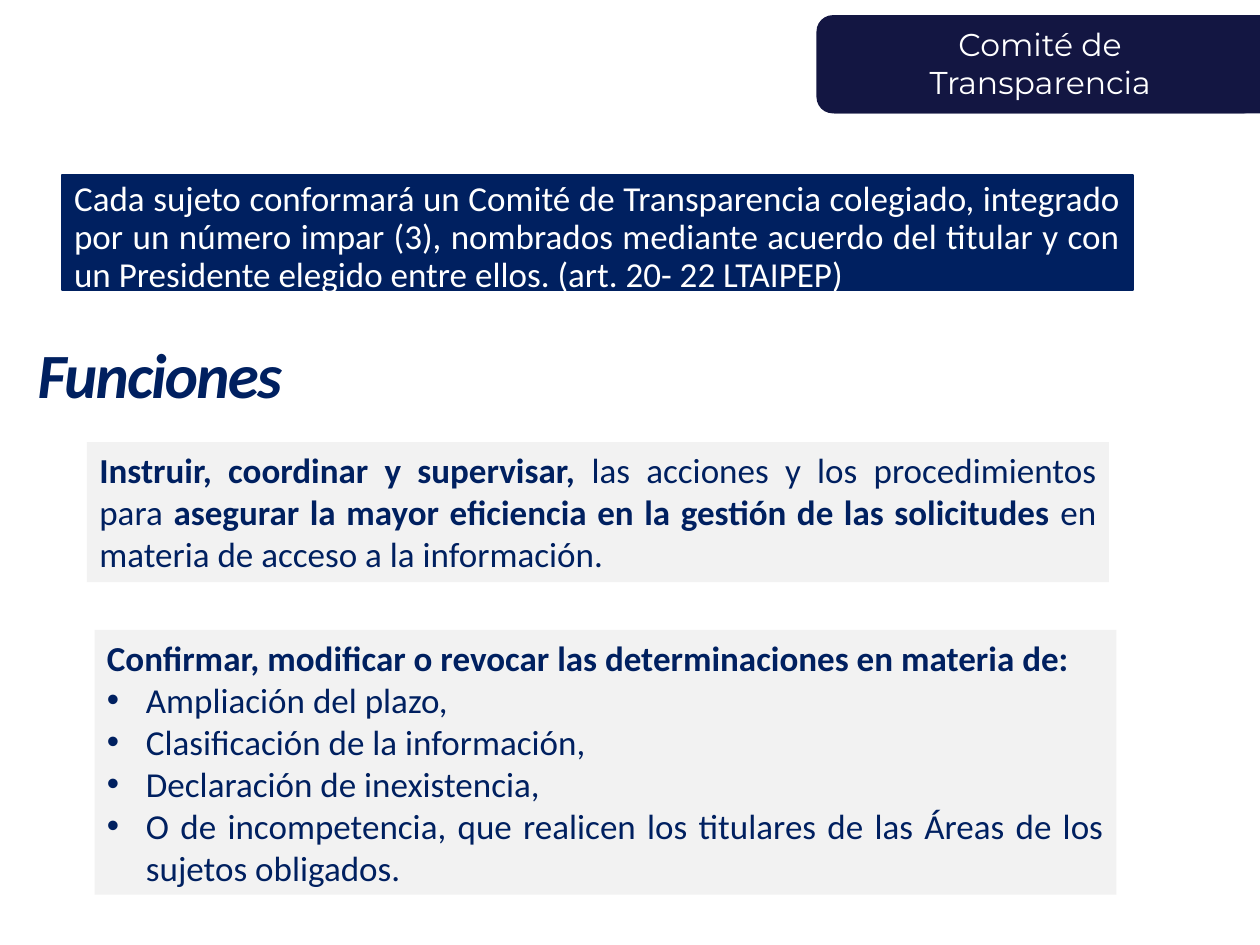
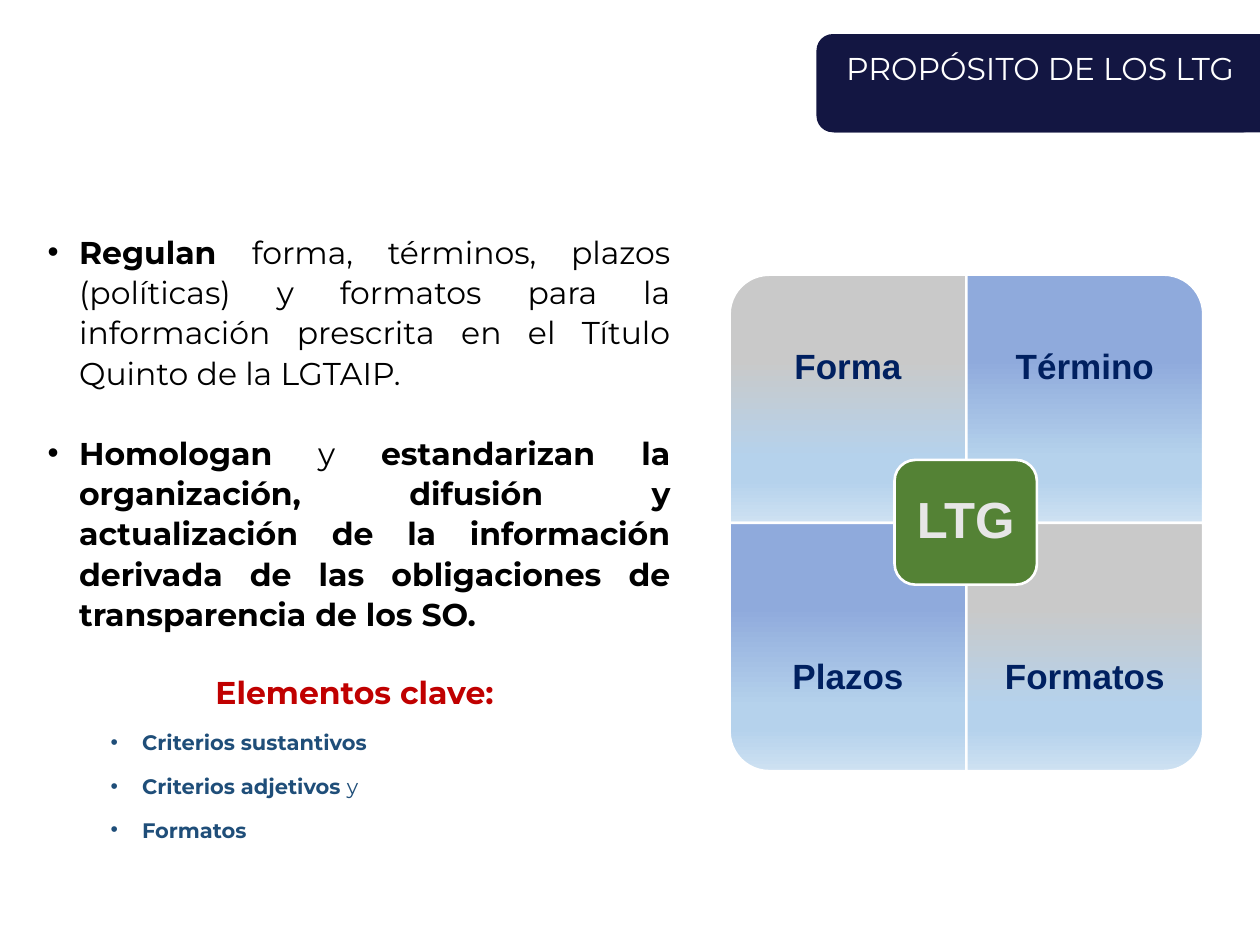
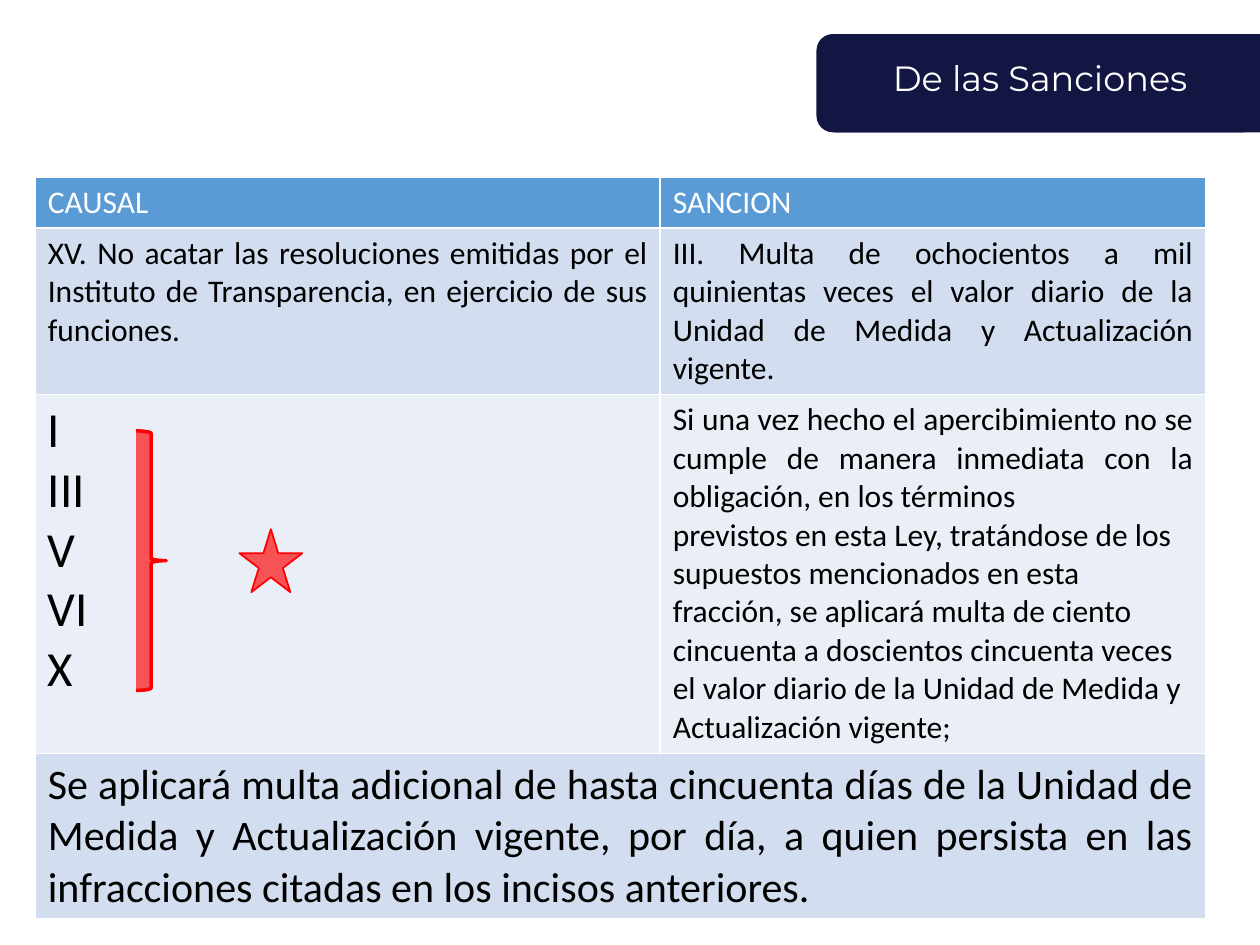
from dataclasses import dataclass

from lxml import etree
from pptx import Presentation
from pptx import util as u
from pptx.dml.color import RGBColor
from pptx.enum import shapes, text
from pptx.oxml import ns


@dataclass(frozen=True)
class Theme:
    navy: str = "002060"
    band: str = "131642"
    white: str = "FFFFFF"
    black: str = "000000"
    panel: str = "F2F2F2"
    red: str = "FF0000"
    dark_red: str = "C00000"
    steel: str = "1F4E79"
    green: str = "548235"
    light_gray: str = "E7E6E6"
    pane_gray: str = "C9C9C9"
    pane_blue: str = "8FAADC"
    pane_middle: str = "B5D2EC"
    pane_end: str = "CEE1F2"
    header: str = "5B9BD5"
    row_dark: str = "D2DEEF"
    row_light: str = "EAEFF7"
    body_font: str = "Calibri"
    title_font: str = "Montserrat"
    diagram_font: str = "Arial"
    heading: int = 36
    hub: int = 29
    numerals: int = 28
    large: int = 24
    body: int = 20
    medium: int = 18
    small: int = 12


theme = Theme()
Kind = shapes.MSO_SHAPE
Align = text.PP_ALIGN
Anchor = text.MSO_ANCHOR


def add_block(slide, kind, box, fill=None, line=None, line_width=1):
    """Add a preset shape, or a text box when kind is None; box is in inches."""
    lengths = [u.Inches(value) for value in box]
    if kind is None:
        return slide.shapes.add_textbox(*lengths)
    shape = slide.shapes.add_shape(kind, *lengths)
    shape.shadow.inherit = False
    if fill:
        shape.fill.solid()
        shape.fill.fore_color.rgb = RGBColor.from_string(fill)
    if line:
        shape.line.color.rgb = RGBColor.from_string(line)
        shape.line.width = u.Pt(line_width)
    else:
        shape.line.fill.background()
    return shape


def write(holder, paragraphs, font, layout=None, **frame_format):
    """Fill a shape or cell; a paragraph is (runs, own layout), a run (text, own font).

    The layout key "bullet" gives the left margin of a bulleted paragraph in inches
    and "hang" how far its bullet stands to the left of that margin.
    """
    frame = holder.text_frame
    for name, value in {"word_wrap": True, "vertical_anchor": Anchor.TOP, **frame_format}.items():
        setattr(frame, name, value)
    for index, (runs, own_layout) in enumerate(paragraphs):
        paragraph = frame.paragraphs[0] if index == 0 else frame.add_paragraph()
        settings = {"alignment": Align.LEFT, **(layout or {}), **own_layout}
        bullet, hang = settings.pop("bullet", None), settings.pop("hang", 0.25)
        if bullet:
            properties = paragraph._p.get_or_add_pPr()
            properties.set("marL", str(u.Inches(bullet)))
            properties.set("indent", str(-u.Inches(hang)))
            etree.SubElement(properties, ns.qn("a:buFont")).set("typeface", "Arial")
            etree.SubElement(properties, ns.qn("a:buChar")).set("char", "•")
        for name, value in settings.items():
            setattr(paragraph, name, value)
        for content, own_font in runs:
            run = paragraph.add_run()
            run.text = content
            for name, value in {"bold": False, **font, **own_font}.items():
                if name == "color":
                    run.font.color.rgb = RGBColor.from_string(value)
                else:
                    setattr(run.font, name, u.Pt(value) if name == "size" else value)


presentation = Presentation()
presentation.slide_width = u.Inches(10)
presentation.slide_height = u.Inches(7.5)
committee, purpose, sanctions = [
    presentation.slides.add_slide(presentation.slide_layouts[6]) for _ in range(3)
]
bold = {"bold": True}
justified = {"alignment": Align.JUSTIFY}
centered = {"alignment": Align.CENTER}

# Slide 1: committee and its functions
navy_font = {"name": theme.body_font, "size": theme.body, "color": theme.navy}
intro = add_block(committee, Kind.RECTANGLE, (0.49, 1.39, 8.5, 0.91), theme.navy, theme.navy)
write(
    intro,
    [([("Cada sujeto conformará un Comité de Transparencia colegiado, integrado por un número "
        "impar (3), nombrados mediante acuerdo del titular y con un Presidente elegido entre "
        "ellos. (art. 20- 22 LTAIPEP)", {})], {})],
    {**navy_font, "color": theme.white},
    {**justified, "line_spacing": 0.9},
)
functions_heading = add_block(committee, None, (0.2, 2.65, 3.46, 0.63))
write(
    functions_heading,
    [([("Funciones", {})], {})],
    {**navy_font, "size": theme.heading, "bold": True, "italic": True},
    vertical_anchor=Anchor.MIDDLE,
)
functions_heading.text_frame.paragraphs[0].runs[0]._r.get_or_add_rPr().set("spc", "-100")

determinations = (
    "Ampliación del plazo,",
    "Clasificación de la información,",
    "Declaración de inexistencia,",
    "O de incompetencia, que realicen los titulares de las Áreas de los sujetos obligados.",
)
function_panels = (
    ((0.69, 3.51, 8.11, 1.11), [
        ([("Instruir, coordinar y supervisar, ", bold),
          ("las acciones y los procedimientos para ", {}),
          ("asegurar la mayor eficiencia en la gestión de las solicitudes", bold),
          (" en materia de acceso a la información.", {})], {}),
    ]),
    ((0.75, 5, 8.11, 2.1), [
        ([("Confirmar, modificar o revocar las determinaciones en materia de:", bold)], {}),
        *[([(item, {})], {"bullet": 0.31, "hang": 0.31}) for item in determinations],
    ]),
)
for box, paragraphs in function_panels:
    panel = add_block(committee, Kind.RECTANGLE, box, theme.panel)
    write(panel, paragraphs, navy_font, {**justified, "line_spacing": u.Pt(24)})

# Slide 2: purpose text and four-part diagram
rule = {**justified, "bullet": 0.25, "line_spacing": u.Pt(23)}
key_line = {"line_spacing": u.Pt(25)}
criterion = {**key_line, "bullet": 0.75}
criterion_font = {"size": theme.small, "color": theme.steel}
criterion_bold = {**criterion_font, **bold}
purpose_text = add_block(purpose, None, (0.28, 1.78, 5.14, 4.63))
write(
    purpose_text,
    [
        ([("Regulan ", bold),
          ("forma, términos, plazos (políticas) y formatos para la información prescrita "
           "en el Título Quinto de la LGTAIP.", {})], rule),
        ([("Homologan", bold), (" y ", {}),
          ("estandarizan la organización, difusión y actualización de la información "
           "derivada de las obligaciones de transparencia de los SO.", bold)],
         {**rule, "space_before": u.Pt(23)}),
        ([("Elementos clave: ", {**bold, "color": theme.dark_red})],
         {**key_line, **centered, "space_before": u.Pt(19.75)}),
        ([("Criterios sustantivos", criterion_bold)], criterion),
        ([("Criterios adjetivos ", criterion_bold), ("y", criterion_font)], criterion),
        ([("Formatos", criterion_bold)], criterion),
    ],
    {"name": theme.title_font, "size": theme.medium, "color": theme.black},
)

pane_left, pane_top, pane_width, pane_height = 5.79, 2.18, 1.88, 1.97
label_height = 1.48
label_font = {"name": theme.diagram_font, "size": theme.body, "color": theme.navy, "bold": True}
label_layout = {**centered, "line_spacing": 0.9}
margins = ("margin_left", "margin_top", "margin_right", "margin_bottom")
panes = (("Forma", 270), ("Término", 0), ("Plazos", 180), ("Formatos", 90))
for index, (label, rotation) in enumerate(panes):
    row, column = divmod(index, 2)
    left, top = pane_left + column * pane_width, pane_top + row * pane_height
    width, height = pane_width, pane_height
    if rotation % 180:
        width, height = height, width
    pane = add_block(
        purpose, Kind.ROUND_1_RECTANGLE,
        (left + (pane_width - width) / 2, top + (pane_height - height) / 2, width, height),
        line=theme.white, line_width=1.5,
    )
    pane.rotation = rotation
    pane.fill.gradient()
    gradient = pane._element.spPr.find(ns.qn("a:gradFill"))
    gradient.clear()
    gradient.set("rotWithShape", "0")
    stops = etree.SubElement(gradient, ns.qn("a:gsLst"))
    start = theme.pane_gray if row == column else theme.pane_blue
    for position, color in ((34, start), (74, theme.pane_middle),
                            (83, theme.pane_middle), (100, theme.pane_end)):
        stop = etree.SubElement(stops, ns.qn("a:gs"), pos=str(position * 1000))
        etree.SubElement(stop, ns.qn("a:srgbClr"), val=color)
    etree.SubElement(gradient, ns.qn("a:lin"), ang="5400000", scaled="0")

    label_top = top + row * (pane_height - label_height)
    label_box = add_block(purpose, None, (left, label_top, pane_width, label_height))
    write(label_box, [([(label, {})], {})], label_font, label_layout,
          vertical_anchor=Anchor.MIDDLE, **dict.fromkeys(margins, u.Inches(0.16)))

hub = add_block(purpose, Kind.ROUNDED_RECTANGLE, (7.1, 3.65, 1.13, 0.99),
                theme.green, theme.white, 1.5)
write(hub, [([("LTG", {})], {})],
      {**label_font, "size": theme.hub, "color": theme.light_gray}, label_layout,
      vertical_anchor=Anchor.MIDDLE, **dict.fromkeys(margins, u.Inches(0.1)))

# Slide 3: table of sanctions
row_heights = (0.4, 1.32, 2.85, 1.31)
column_widths = (4.96, 4.33)
row_fills = (theme.header, theme.row_dark, theme.row_light, theme.row_dark)
cells = (
    (0, 0, {"color": theme.white}, [("CAUSAL", {})]),
    (0, 1, {"color": theme.white}, [("SANCION", {})]),
    (1, 0, {}, [("XV. No acatar las resoluciones emitidas por el Instituto de Transparencia, "
                 "en ejercicio de sus funciones.", justified)]),
    (1, 1, {}, [("III. Multa de ochocientos a mil quinientas veces el valor diario de la Unidad "
                 "de Medida y Actualización vigente.", justified)]),
    (2, 0, {"size": theme.numerals}, [(numeral, {}) for numeral in ("I", "III", "V", "VI", "X")]),
    (2, 1, {}, [
        ("Si una vez hecho el apercibimiento no se cumple de manera inmediata con la "
         "obligación, en los términos", justified),
        ("previstos en esta Ley, tratándose de los supuestos mencionados en esta fracción, "
         "se aplicará multa de ciento", {}),
        ("cincuenta a doscientos cincuenta veces el valor diario de la Unidad de Medida y "
         "Actualización vigente;", {}),
    ]),
    (3, 0, {"size": theme.large}, [
        ("Se aplicará multa adicional de hasta cincuenta días de la Unidad de Medida y "
         "Actualización vigente, por día, a quien persista en las infracciones citadas en los "
         "incisos anteriores.", justified)]),
)
table = sanctions.shapes.add_table(
    len(row_heights), len(column_widths), u.Inches(0.28), u.Inches(1.41),
    u.Inches(sum(column_widths)), u.Inches(sum(row_heights)),
).table
table.first_row = table.horz_banding = False
for column, width in zip(table.columns, column_widths):
    column.width = u.Inches(width)
for row, height, fill in zip(table.rows, row_heights, row_fills):
    row.height = u.Inches(height)
    for cell in row.cells:
        properties = cell._tc.get_or_add_tcPr()
        for side in ("lnL", "lnR", "lnT", "lnB"):
            border = etree.SubElement(properties, ns.qn(f"a:{side}"), w=str(u.Pt(1)))
            border_fill = etree.SubElement(border, ns.qn("a:solidFill"))
            etree.SubElement(border_fill, ns.qn("a:srgbClr"), val=theme.white)
        cell.fill.solid()
        cell.fill.fore_color.rgb = RGBColor.from_string(fill)
table.cell(3, 0).merge(table.cell(3, 1))
cell_font = {"name": theme.body_font, "size": theme.medium, "color": theme.black}
for row, column, own_font, paragraphs in cells:
    write(table.cell(row, column),
          [([(content, {})], layout) for content, layout in paragraphs],
          {**cell_font, **own_font})

for kind, box, line_width in (
    (Kind.STAR_5_POINT, (1.9, 4.2, 0.5, 0.5), 1),
    (Kind.RIGHT_BRACE, (1.08, 3.42, 0.24, 2.06), 2),
):
    mark = add_block(sanctions, kind, box, theme.red, theme.red, line_width)
    fill_color = mark._element.spPr.find(ns.qn("a:solidFill")).find(ns.qn("a:srgbClr"))
    etree.SubElement(fill_color, ns.qn("a:alpha"), val="65000")

# Title band of every slide
titles = (
    (committee, "Comité de Transparencia", 0.12, 0.15, theme.medium),
    (purpose, "PROPÓSITO DE LOS LTG", 0.27, 0.34, theme.medium),
    (sanctions, "De las Sanciones", 0.27, 0.4, theme.body),
)
for slide, title, band_top, title_top, size in titles:
    band_end = add_block(slide, Kind.ROUND_1_RECTANGLE, (6.62, band_top, 3.38, 0.78), theme.band)
    band_end._element.spPr.find(ns.qn("a:xfrm")).set("flipH", "1")
    add_block(slide, Kind.ROUNDED_RECTANGLE, (6.48, band_top, 3.52, 0.78), theme.band)
    title_box = add_block(slide, None, (6.61, title_top, 3.29, 0.71))
    write(title_box, [([(title, {})], {})],
          {"name": theme.title_font, "size": size, "color": theme.white}, centered)

presentation.save("out.pptx")
